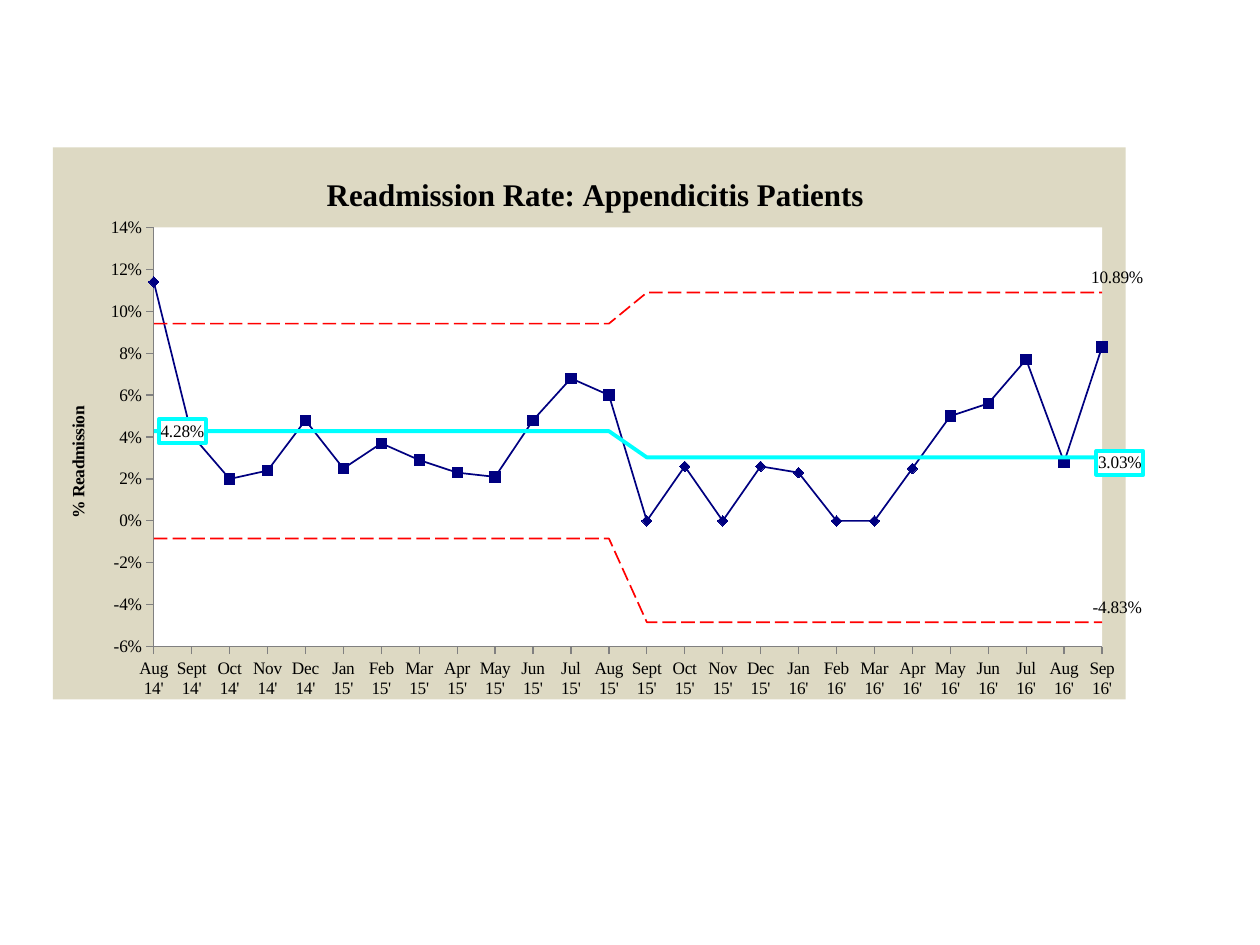
from dataclasses import dataclass

from pptx import Presentation
from pptx.chart.data import CategoryChartData
from pptx.dml.color import RGBColor
from pptx.enum.chart import (XL_AXIS_CROSSES, XL_CHART_TYPE, XL_LABEL_POSITION,
                             XL_MARKER_STYLE, XL_TICK_LABEL_POSITION, XL_TICK_MARK)
from pptx.enum.dml import MSO_LINE
from pptx.oxml import parse_xml
from pptx.oxml.ns import nsdecls, qn
from pptx.util import Inches, Pt


@dataclass(frozen=True)
class Theme:
    font: str = "Times New Roman"
    title_size: int = 18
    text_size: int = 10
    text: str = "000000"
    background: str = "DDD9C3"
    plot: str = "FFFFFF"
    axis: str = "808080"
    rate: str = "000080"
    limit: str = "FF0000"
    mean: str = "00FFFF"
    thin: float = 1
    thick: float = 2.25


THEME = Theme()
MONTHS = ("Aug 14',Sept 14',Oct 14',Nov 14',Dec 14',Jan 15',Feb 15',Mar 15',Apr 15',"
          "May 15',Jun 15',Jul 15',Aug 15',Sept 15',Oct 15',Nov 15',Dec 15',Jan 16',"
          "Feb 16',Mar 16',Apr 16',May 16',Jun 16',Jul 16',Aug 16',Sep 16'").split(",")
RATES = [0.114, 0.041, 0.02, 0.024, 0.048, 0.025, 0.037, 0.029, 0.023, 0.021, 0.048,
         0.068, 0.06, 0, 0.026, 0, 0.026, 0.023, 0, 0, 0.025, 0.05, 0.056, 0.077,
         0.028, 0.083]
PERIOD = len(MONTHS) // 2
LAST = len(MONTHS) - 1
# Value in the first and in the second period, from upper to lower limit
LEVELS = [(0.0941, 0.1089), (0.077, 0.083), (0.06, 0.057), (0.0428, 0.0303),
          (0.026, 0.004), (0.009, -0.022), (-0.0084, -0.0483)]
UPPER, MEAN, LOWER = 1, 4, 7
BASELINE_POINTS = (0, PERIOD)
LOW_RUN = range(PERIOD + 1, PERIOD + 8)


def color(value):
    return RGBColor.from_string(value)


def style_font(font, size=THEME.text_size, bold=False):
    font.name = THEME.font
    font.size = Pt(size)
    font.bold = bold
    font.color.rgb = color(THEME.text)


def style_line(line, value, width, dash=None):
    line.color.rgb = color(value)
    line.width = Pt(width)
    if dash:
        line.dash_style = dash


def box_properties(fill, border=None):
    outline = (f'<a:ln w="{Pt(THEME.thick)}"><a:solidFill><a:srgbClr val="{border}"/>'
               '</a:solidFill></a:ln>' if border else '<a:ln><a:noFill/></a:ln>')
    return parse_xml(f'<c:spPr {nsdecls("c", "a")}><a:solidFill><a:srgbClr val="{fill}"/>'
                     f'</a:solidFill>{outline}</c:spPr>')


def set_layout(parent, index, **settings):
    """Place a chart part by shares of the chart's size."""
    for layout in parent.findall(qn("c:layout")):
        parent.remove(layout)
    items = "".join(f'<c:{name} val="{value}"/>' for name, value in settings.items())
    parent.insert(index, parse_xml(f'<c:layout {nsdecls("c")}><c:manualLayout>{items}'
                                   '</c:manualLayout></c:layout>'))


def write_title(title, text, size, x, y):
    run = title.text_frame.paragraphs[0].add_run()
    run.text = text
    style_font(run.font, size, bold=True)
    set_layout(title._element, 1, xMode="edge", yMode="edge", x=x, y=y)


def label_point(series, index, position, shift=None, border=None):
    label = series.points[index].data_label
    style_font(label.font)
    label.position = position
    element = label._get_or_add_dLbl()
    element.insert(1, parse_xml(f'<c:numFmt {nsdecls("c")} formatCode="0.00%" '
                                'sourceLinked="0"/>'))
    if border:
        for properties in element.findall(qn("c:spPr")):
            element.remove(properties)
        element.insert(2, box_properties(THEME.plot, border))
    if shift:
        set_layout(element, 1, x=shift[0], y=shift[1])
    series.data_labels.show_value = False


def style_marker(marker, style, size, value):
    marker.style = style
    marker.size = size
    marker.format.fill.solid()
    marker.format.fill.fore_color.rgb = color(value)
    marker.format.line.color.rgb = color(value)


def style_rate(series):
    style_line(series.format.line, THEME.rate, THEME.thin)
    style_marker(series.marker, XL_MARKER_STYLE.SQUARE, 6, THEME.rate)
    for index in (*BASELINE_POINTS, *LOW_RUN):
        point = series.points[index]
        value = THEME.limit if index in LOW_RUN else THEME.rate
        style_marker(point.marker, XL_MARKER_STYLE.DIAMOND, 6, value)
        style_line(point.format.line, THEME.rate, THEME.thin)


def style_level(series, index):
    series.marker.style = XL_MARKER_STYLE.NONE
    if index in (UPPER, LOWER):
        style_line(series.format.line, THEME.limit, THEME.thin, MSO_LINE.LONG_DASH)
        label_point(series, LAST, XL_LABEL_POSITION.ABOVE, (0.014, 0))
    elif index == MEAN:
        style_line(series.format.line, THEME.mean, THEME.thick)
        label_point(series, 0, XL_LABEL_POSITION.RIGHT, border=THEME.mean)
        label_point(series, LAST, XL_LABEL_POSITION.RIGHT, (-0.01, 0.01), THEME.mean)
    else:
        series.format.line.fill.background()


def style_axes(chart):
    for axis in (chart.category_axis, chart.value_axis):
        axis.has_major_gridlines = False
        axis.major_tick_mark = XL_TICK_MARK.OUTSIDE
        axis.minor_tick_mark = XL_TICK_MARK.NONE
        axis.tick_label_position = XL_TICK_LABEL_POSITION.LOW
        style_font(axis.tick_labels.font)
        style_line(axis.format.line, THEME.axis, 0.75)
    values = chart.value_axis
    values.minimum_scale, values.maximum_scale, values.major_unit = -0.06, 0.14, 0.02
    values.tick_labels.number_format = "0%"
    values.tick_labels.number_format_is_linked = False
    values.crosses = XL_AXIS_CROSSES.MINIMUM
    values._element.find(qn("c:majorUnit")).addprevious(
        parse_xml(f'<c:crossBetween {nsdecls("c")} val="midCat"/>'))
    write_title(values.axis_title, "% Readmission", THEME.text_size, 0.01, 0.46)


def add_control_chart(slide, left, top, width, height):
    data = CategoryChartData(number_format="0.0%")
    data.categories = MONTHS
    data.add_series("Series 1", RATES)
    for number, (before, after) in enumerate(LEVELS, 2):
        data.add_series(f"Series {number}", [before] * PERIOD + [after] * PERIOD)
    chart = slide.shapes.add_chart(XL_CHART_TYPE.LINE_MARKERS, left, top, width, height,
                                   data).chart
    chart.has_legend = False
    style_font(chart.font)
    chart.has_title = True
    write_title(chart.chart_title, "Readmission Rate: Appendicitis Patients",
                THEME.title_size, 0.25, 0.04)
    style_axes(chart)
    chart.plots[0].vary_by_categories = False
    for index, series in enumerate(chart.plots[0].series):
        series.smooth = False
        if index == 0:
            style_rate(series)
        else:
            style_level(series, index)
    chart_space = chart._chartSpace
    chart_space.find(qn("c:txPr")).addprevious(box_properties(THEME.background))
    plot_area = chart_space.find(qn("c:chart")).find(qn("c:plotArea"))
    set_layout(plot_area, 0, layoutTarget="inner", xMode="edge", yMode="edge",
               x=0.094, y=0.145, w=0.884, h=0.76)
    plot_area.append(box_properties(THEME.plot))


def main():
    presentation = Presentation()
    presentation.slide_width, presentation.slide_height = Inches(10), Inches(7.5)
    slide = presentation.slides.add_slide(presentation.slide_layouts[6])
    add_control_chart(slide, Inches(0.42), Inches(1.17), Inches(8.67), Inches(4.38))
    presentation.save("out.pptx")


if __name__ == "__main__":
    main()
